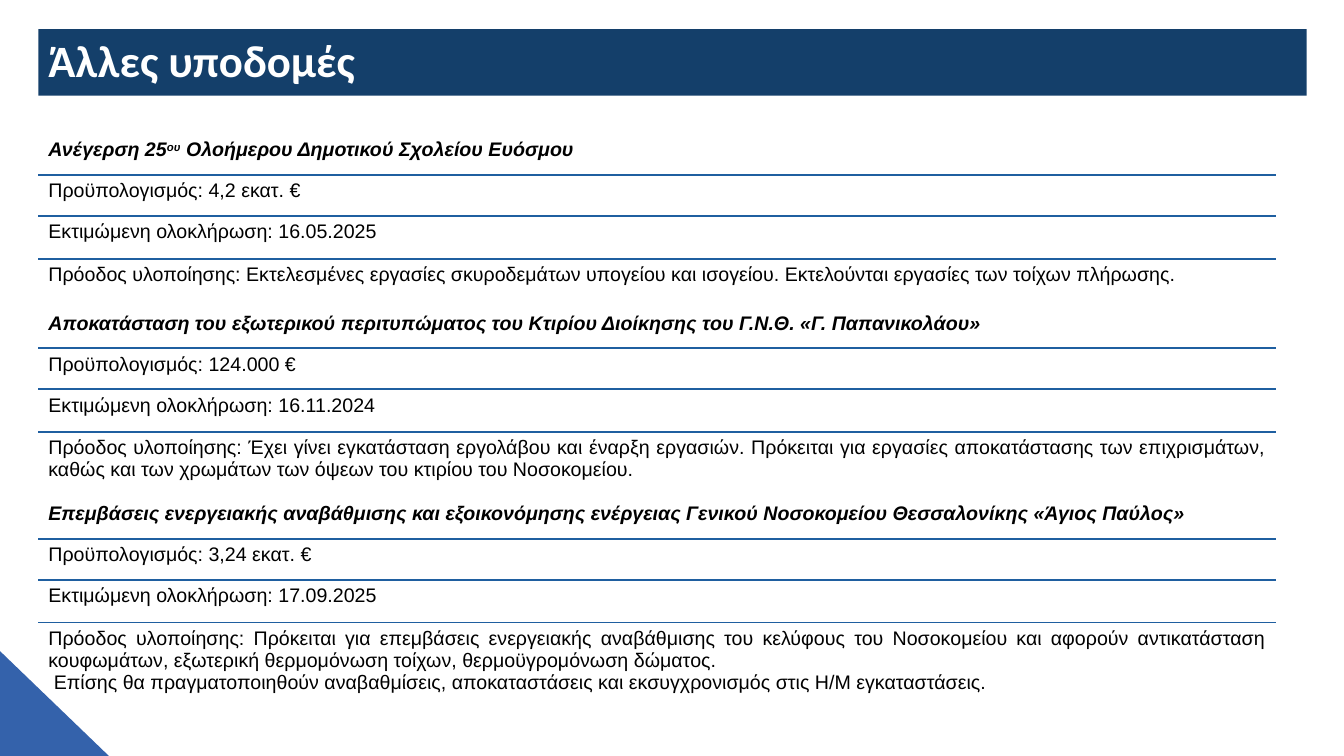
from dataclasses import dataclass

from lxml.etree import SubElement
from pptx import Presentation
from pptx.dml.color import RGBColor
from pptx.enum.shapes import MSO_SHAPE
from pptx.enum.text import MSO_ANCHOR, PP_ALIGN
from pptx.oxml.ns import qn
from pptx.util import Emu, Inches, Pt

COLOURS = {
    "banner": "143F6A",
    "corner": "3462AB",
    "rule": "1F5FA0",
    "text": "000000",
    "title": "FFFFFF",
}
SLIDE_WIDTH = Inches(13.33)
SLIDE_HEIGHT = Inches(7.5)
LEFT = 2.85
TABLE_WIDTH = 92.12
FACT_ROWS = (5.41, 5.41, 5.67)


@dataclass(frozen=True)
class Project:
    top: float
    progress_height: float
    heading: tuple[str, ...]
    budget: str
    completion: str
    progress: tuple[str, ...]
    alignment: PP_ALIGN = PP_ALIGN.JUSTIFY


PROJECTS = (
    Project(
        17.73, 5.41,
        ("Ανέγερση 25", "ου", " Ολοήμερου Δημοτικού Σχολείου Ευόσμου"),
        "4,2 εκατ. €", "16.05.2025",
        ("Εκτελεσμένες εργασίες σκυροδεμάτων υπογείου και ισογείου. "
         "Εκτελούνται εργασίες των τοίχων πλήρωσης.",),
        PP_ALIGN.LEFT,
    ),
    Project(
        40.67, 7.6,
        ("Αποκατάσταση του εξωτερικού περιτυπώματος του Κτιρίου Διοίκησης "
         "του Γ.Ν.Θ. «Γ. Παπανικολάου»",),
        "124.000 €", "16.11.2024",
        ("Έχει γίνει εγκατάσταση εργολάβου και έναρξη εργασιών. Πρόκειται για "
         "εργασίες αποκατάστασης των επιχρισμάτων, καθώς και των χρωμάτων των "
         "όψεων του κτιρίου του Νοσοκομείου.",),
    ),
    Project(
        65.87, 10.67,
        ("Επεμβάσεις ενεργειακής αναβάθμισης και εξοικονόμησης ενέργειας "
         "Γενικού Νοσοκομείου Θεσσαλονίκης «Άγιος Παύλος»",),
        "3,24 εκατ. €", "17.09.2025",
        ("Πρόκειται για επεμβάσεις ενεργειακής αναβάθμισης του κελύφους του "
         "Νοσοκομείου και αφορούν αντικατάσταση κουφωμάτων, εξωτερική "
         "θερμομόνωση τοίχων, θερμοϋγρομόνωση δώματος.",
         " Επίσης θα πραγματοποιηθούν αναβαθμίσεις, αποκαταστάσεις και "
         "εκσυγχρονισμός στις Η/Μ εγκαταστάσεις."),
    ),
)


def across(percent: float) -> Emu:
    return Emu(round(SLIDE_WIDTH * percent / 100))


def down(percent: float) -> Emu:
    return Emu(round(SLIDE_HEIGHT * percent / 100))


def colour(name: str) -> RGBColor:
    return RGBColor.from_string(COLOURS[name])


def write(paragraph, text: str, *, size: int = 14, font: str = "Arial",
          ink: str = "text", bold: bool = False, italic: bool = False,
          superscript: bool = False,
          alignment: PP_ALIGN = PP_ALIGN.LEFT) -> None:
    paragraph.alignment = alignment
    run = paragraph.add_run()
    run.text = text
    run.font.size = Pt(size)
    run.font.name = font
    run.font.bold = bold
    run.font.italic = italic
    run.font.color.rgb = colour(ink)
    if superscript:
        run.font._element.set("baseline", "30000")


def set_borders(cell, ruled_sides: str) -> None:
    properties = cell._tc.get_or_add_tcPr()
    for position, side in enumerate("LRTB"):
        line = SubElement(properties, qn(f"a:ln{side}"), w=str(Pt(1.5)))
        if side in ruled_sides:
            fill = SubElement(line, qn("a:solidFill"))
            SubElement(fill, qn("a:srgbClr"), val=COLOURS["rule"])
        else:
            SubElement(line, qn("a:noFill"))
        properties.insert(position, line)


def add_project(slide, project: Project) -> None:
    heights = (*FACT_ROWS, project.progress_height)
    table = slide.shapes.add_table(
        len(heights), 1, across(LEFT), down(project.top),
        across(TABLE_WIDTH), down(sum(heights))).table
    table.first_row = False
    table.horz_banding = False
    last = len(heights) - 1
    for index, height in enumerate(heights):
        table.rows[index].height = down(height)
        cell = table.cell(index, 0)
        cell.fill.background()
        set_borders(cell, ("T" if index > 0 else "") + ("B" if index < last else ""))

    heading = table.cell(0, 0).text_frame.paragraphs[0]
    for index, part in enumerate(project.heading):
        write(heading, part, bold=True, italic=True, superscript=index == 1)
    write(table.cell(1, 0).text_frame.paragraphs[0],
          f"Προϋπολογισμός: {project.budget}")
    write(table.cell(2, 0).text_frame.paragraphs[0],
          f"Εκτιμώμενη ολοκλήρωση: {project.completion}")
    frame = table.cell(last, 0).text_frame
    first, *others = project.progress
    write(frame.paragraphs[0], f"Πρόοδος υλοποίησης: {first}",
          alignment=project.alignment)
    for text in others:
        write(frame.add_paragraph(), text, alignment=project.alignment)


def add_corner(slide) -> None:
    corner = slide.shapes.add_shape(
        MSO_SHAPE.RIGHT_TRIANGLE, 0, down(86.13), across(8.1), down(13.87))
    corner.shadow.inherit = False
    corner.fill.solid()
    corner.fill.fore_color.rgb = colour("corner")
    corner.line.fill.background()


def set_title(slide, text: str) -> None:
    title = slide.shapes.title
    title.left, title.top = across(LEFT), down(3.87)
    title.width, title.height = across(94.37), down(8.8)
    title.fill.solid()
    title.fill.fore_color.rgb = colour("banner")
    title.text_frame.vertical_anchor = MSO_ANCHOR.MIDDLE
    title.text_frame.word_wrap = True
    paragraph = title.text_frame.paragraphs[0]
    paragraph.line_spacing = 0.9
    write(paragraph, text, size=32, font="Calibri", ink="title", bold=True)


def main() -> None:
    presentation = Presentation()
    presentation.slide_width = SLIDE_WIDTH
    presentation.slide_height = SLIDE_HEIGHT
    slide = presentation.slides.add_slide(presentation.slide_layouts[5])
    add_corner(slide)
    set_title(slide, "Άλλες υποδομές")
    for project in PROJECTS:
        add_project(slide, project)
    presentation.save("out.pptx")


if __name__ == "__main__":
    main()
